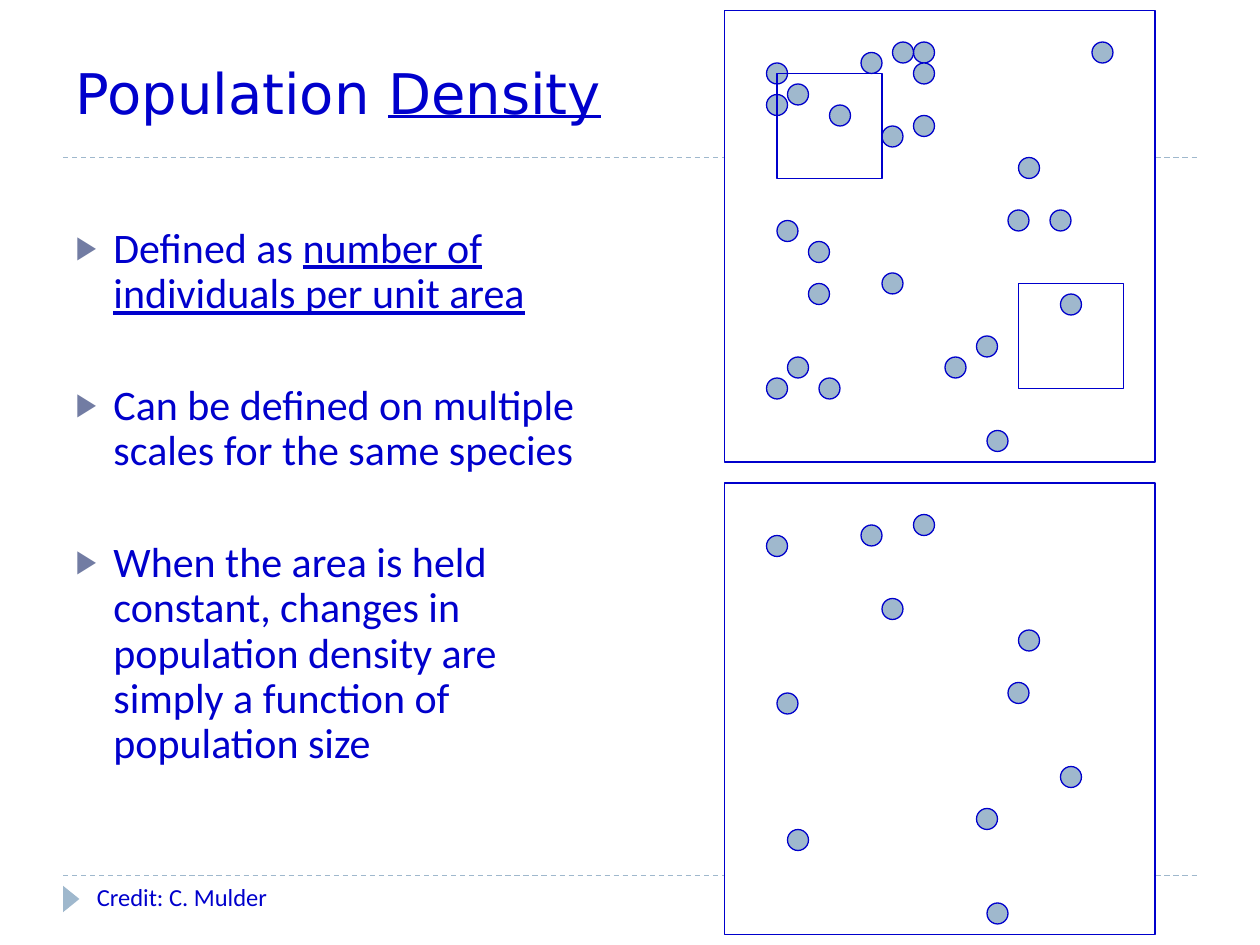
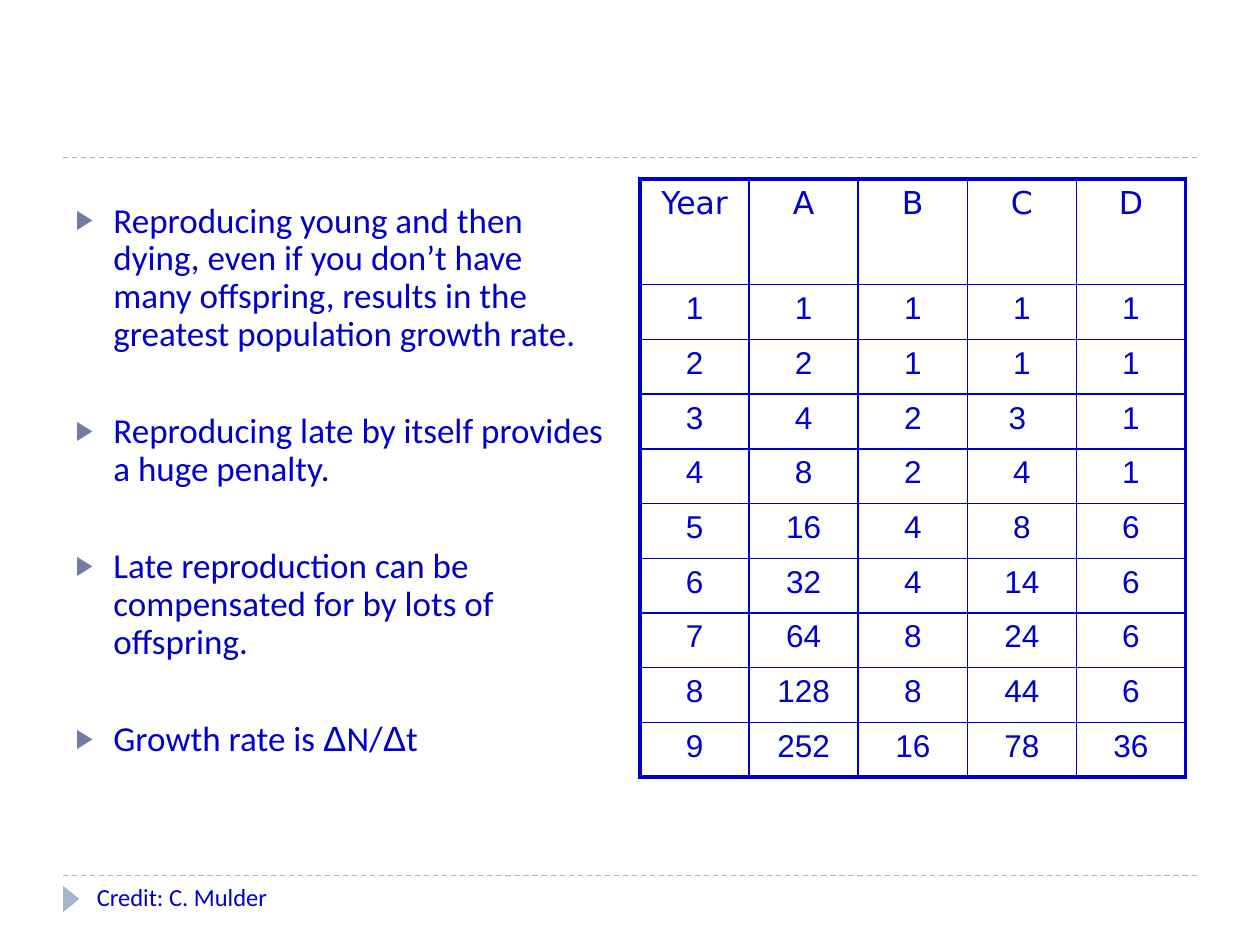
from lxml import etree
from pptx import Presentation
from pptx.dml.color import RGBColor
from pptx.enum import dml, shapes, text
from pptx.oxml.ns import qn
from pptx.util import Inches, Pt

COLORS = {"ink": "0000CC", "accent": "9FB8CD", "bullet": "727CA3", "paper": "FFFFFF"}
RGB = {name: RGBColor.from_string(value) for name, value in COLORS.items()}
HEAD, BODY, NUM = "DejaVu Sans", "Calibri", "Arial"


def write(p, pieces, size, font):
    for words, style in pieces:
        r = p.add_run()
        r.text = words
        r.font.size = Pt(size)
        r.font.name = style.get("font", font)
        r.font.color.rgb = RGB["ink"]
        if style.get("underline"):
            r.font.underline = True


def draw(group, kind, left, top, width, height, fill=None, line="ink"):
    sp = group.add_shape(kind, Inches(left), Inches(top), Inches(width), Inches(height))
    sp.shadow.inherit = False
    if fill:
        sp.fill.solid()
        sp.fill.fore_color.rgb = RGB[fill]
    else:
        sp.fill.background()
    if line:
        sp.line.color.rgb = RGB[line]
        sp.line.width = Pt(0.75)
    else:
        sp.line.fill.background()
    return sp


UNDER = {"underline": True}
DELTA = ("Δ", {"font": NUM})
pages = [
    {
        "title": [("Population ", {}), ("Density", UNDER)],
        "top": 1.75, "inset": 0.05, "size": 24, "gap": 38,
        "bullets": [
            [("Defined as ", {}), ("number of individuals per unit area", UNDER)],
            [("Can be defined on multiple scales for the same species", {})],
            [("When the area is held constant, changes in population density are "
              "simply a function of population size", {})],
        ],
    },
    {
        "title": None,
        "top": 1.17, "inset": 0.44, "size": 20, "gap": 34,
        "bullets": [
            [("Reproducing young and then dying, even if you don’t have many offspring, "
              "results in the greatest population growth rate.", {})],
            [("Reproducing late by itself provides a huge penalty.", {})],
            [("Late reproduction can be compensated for by lots of offspring.", {})],
            [("Growth rate is ", {}), DELTA, ("N/", {}), DELTA, ("t", {})],
        ],
    },
]

prs = Presentation()
prs.slide_width, prs.slide_height = Inches(10), Inches(7.5)

for page in pages:
    s = prs.slides.add_slide(prs.slide_layouts[1])
    for y in (6.95, 1.25):
        rule = s.shapes.add_connector(shapes.MSO_CONNECTOR.STRAIGHT,
                                      Inches(0.5), Inches(y), Inches(9.5), Inches(y))
        rule.line.color.rgb = RGB["accent"]
        rule.line.width = Pt(0.75)
        rule.line.dash_style = dml.MSO_LINE.DASH
        etree.SubElement(rule._element.spPr, qn("a:effectLst"))
    marker = draw(s.shapes, shapes.MSO_SHAPE.ISOSCELES_TRIANGLE,
                  0.46, 7.07, 0.21, 0.13, "accent", None)
    marker.rotation = 90

    title = s.shapes.title
    if page["title"]:
        title.left, title.top = Inches(0.5), Inches(0.3)
        title.width, title.height = Inches(9), Inches(0.86)
        tf = title.text_frame
        tf.auto_size = text.MSO_AUTO_SIZE.NONE
        tf.vertical_anchor = text.MSO_ANCHOR.MIDDLE
        tf.paragraphs[0].alignment = text.PP_ALIGN.LEFT
        write(tf.paragraphs[0], page["title"], 32, HEAD)
    else:
        title._element.getparent().remove(title._element)

    body = s.placeholders[1]
    body.left, body.top = Inches(0.5), Inches(page["top"])
    body.width, body.height = Inches(4.42), Inches(4.95)
    tf = body.text_frame
    tf.auto_size = text.MSO_AUTO_SIZE.NONE
    tf.vertical_anchor = text.MSO_ANCHOR.TOP
    tf.margin_top = Inches(page["inset"])
    for i, pieces in enumerate(page["bullets"]):
        p = tf.add_paragraph() if i else tf.paragraphs[0]
        pPr = p._p.get_or_add_pPr()
        pPr.set("marL", str(Inches(0.3)))
        pPr.set("indent", str(-Inches(0.3)))
        color = etree.SubElement(pPr, qn("a:buClr"))
        etree.SubElement(color, qn("a:srgbClr"), val=COLORS["bullet"])
        etree.SubElement(pPr, qn("a:buSzPct"), val="76000")
        etree.SubElement(pPr, qn("a:buChar"), char="▶")
        p.line_spacing = 0.9
        p.space_before = Pt(page["gap"] if i else 0)
        write(p, pieces, page["size"], BODY)

    credit = s.shapes.add_textbox(Inches(0.67), Inches(6.95), Inches(2.17), Inches(0.4))
    credit.text_frame.word_wrap = True
    write(credit.text_frame.paragraphs[0], [("Credit: C. Mulder", {})], 14, BODY)

density, growth = prs.slides

UNIT = 1 / 12
sparse = [(4, 5), (13, 4), (15, 11), (5, 20), (27, 19), (28, 14), (6, 33), (24, 31),
          (32, 27), (25, 40), (18, 3)]
extra = [(4, 8), (8, 26), (18, 10), (8, 22), (31, 19), (21, 33), (15, 25), (16, 3),
         (4, 35), (9, 35), (35, 3), (18, 5), (6, 7), (10, 9)]
quadrats = [(28, 26), (5, 6)]
panels = [(1, sparse + extra, quadrats), (46, sparse, [])]

for panel_top, dots, squares in panels:
    group = density.shapes.add_group_shape().shapes
    left, top = 69 * UNIT, panel_top * UNIT
    draw(group, shapes.MSO_SHAPE.RECTANGLE, left, top, 41 * UNIT, 43 * UNIT, "paper")
    for x, y in dots:
        draw(group, shapes.MSO_SHAPE.OVAL, left + x * UNIT, top + y * UNIT,
             2 * UNIT, 2 * UNIT, "accent")
    for x, y in squares:
        draw(group, shapes.MSO_SHAPE.RECTANGLE, left + x * UNIT, top + y * UNIT,
             10 * UNIT, 10 * UNIT)

rows = [
    ("Year", "A", "B", "C", "D"),
    ("1", "1", "1", "1", "1"),
    ("2", "2", "1", "1", "1"),
    ("3", "4", "2", "3 ", "1"),
    ("4", "8", "2", "4", "1"),
    ("5", "16", "4", "8", "6"),
    ("6", "32", "4", "14", "6"),
    ("7", "64", "8", "24", "6"),
    ("8", "128", "8", "44", "6"),
    ("9", "252", "16", "78", "36"),
]
last_row, last_col = len(rows) - 1, len(rows[0]) - 1
frame = growth.shapes.add_table(len(rows), len(rows[0]), Inches(5.08), Inches(1.42),
                                Inches(4.33), Inches(4.75))
table = frame.table
table.first_row = table.horz_banding = False
for column in table.columns:
    column.width = Inches(4.33 / len(rows[0]))
for i, row in enumerate(table.rows):
    row.height = Inches((4.75 - 0.84) / last_row if i else 0.84)

for i, values in enumerate(rows):
    for j, value in enumerate(values):
        cell = table.cell(i, j)
        p = cell.text_frame.paragraphs[0]
        p.alignment = text.PP_ALIGN.CENTER
        write(p, [(value, {})], 18, NUM if i else HEAD)
        tcPr = cell._tc.get_or_add_tcPr()
        outer = {"lnL": j == 0, "lnR": j == last_col, "lnT": i == 0, "lnB": i == last_row}
        for side, is_outer in outer.items():
            ln = etree.SubElement(tcPr, qn(f"a:{side}"), w=str(Pt(2.25 if is_outer else 1)))
            fill = etree.SubElement(ln, qn("a:solidFill"))
            etree.SubElement(fill, qn("a:srgbClr"), val=COLORS["ink"])
        cell.fill.background()

prs.save("out.pptx")
